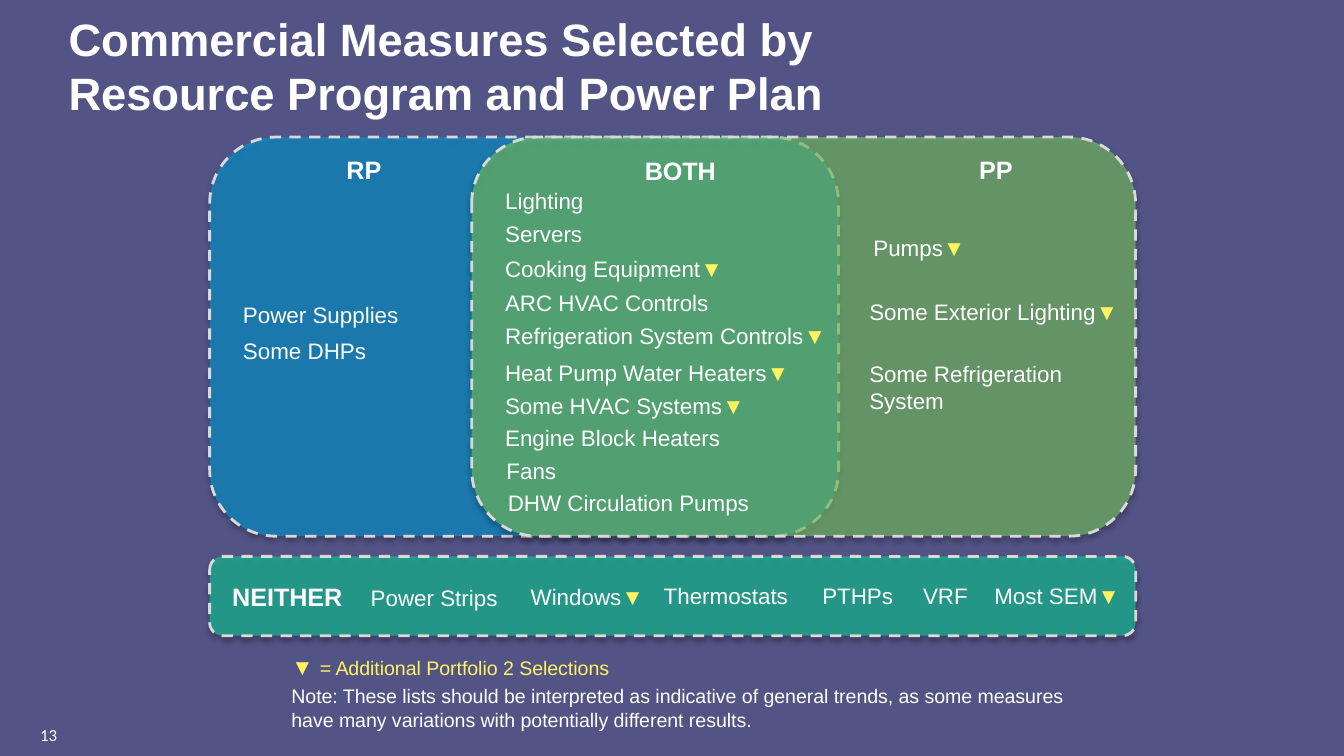
from lxml.etree import SubElement
from pptx import Presentation
from pptx.dml.color import RGBColor
from pptx.enum.dml import MSO_LINE
from pptx.enum.shapes import MSO_SHAPE
from pptx.enum.text import MSO_ANCHOR, MSO_AUTO_SIZE, PP_ALIGN
from pptx.oxml.ns import qn
from pptx.util import Inches, Pt

WHITE, YELLOW, BORDER, BACKGROUND = "FFFFFF", "FFF35F", "D9D9D9", "535486"
MARK = "▼"

TITLE = {"size": Pt(24.3), "bold": True}
HEADING = {"size": Pt(13.5), "bold": True}
ITEM = {"size": Pt(12)}
NOTE = {"size": Pt(10.5)}
MARKED = {"size": Pt(12), "italic": True, "color": YELLOW}
PAGE_NUMBER = {"size": Pt(9), "name": "Calibri"}


def rgb(hex_color):
    return RGBColor.from_string(hex_color)


class SlideBuilder:
    """Holds the current slide and the style shared by its elements."""

    defaults = {"name": "Arial", "color": WHITE, "bold": False, "italic": False}

    def __init__(self, slide):
        self.slide = slide
        slide.background.fill.solid()
        slide.background.fill.fore_color.rgb = rgb(BACKGROUND)

    def add_run(self, paragraph, text, style):
        run = paragraph.add_run()
        run.text = text
        values = {**self.defaults, **style}
        run.font.color.rgb = rgb(values.pop("color"))
        for attribute, value in values.items():
            setattr(run.font, attribute, value)

    def title(self, lines, left, top, width, height):
        shape = self.slide.shapes.title
        box = {"left": left, "top": top, "width": width, "height": height}
        for attribute, value in box.items():
            setattr(shape, attribute, Inches(value))
        frame = shape.text_frame
        frame.vertical_anchor = MSO_ANCHOR.MIDDLE
        paragraph = frame.paragraphs[0]
        paragraph.alignment = PP_ALIGN.LEFT
        for index, line in enumerate(lines):
            if index:
                paragraph.add_line_break()
            self.add_run(paragraph, line, TITLE)

    def text(self, runs, left, top, width, height=0.3, wrap=False,
             align=PP_ALIGN.LEFT):
        """Add a one-paragraph text box from (text, style) pairs."""
        box = self.slide.shapes.add_textbox(
            Inches(left), Inches(top), Inches(width), Inches(height))
        frame = box.text_frame
        frame.word_wrap = wrap
        frame.auto_size = MSO_AUTO_SIZE.SHAPE_TO_FIT_TEXT
        paragraph = frame.paragraphs[0]
        paragraph.alignment = align
        for text, style in runs:
            self.add_run(paragraph, text, style)

    def measure(self, name, left, top, width, height=0.3, wrap=False):
        """Add a measure; a trailing mark gets its own style."""
        runs = [(name.removesuffix(MARK), ITEM)]
        if name.endswith(MARK):
            runs.append((MARK, MARKED))
        self.text(runs, left, top, width, height, wrap)

    def region(self, color, left, top, width, height):
        """Add a translucent rounded box with a dashed border and a shadow."""
        shape = self.slide.shapes.add_shape(
            MSO_SHAPE.ROUNDED_RECTANGLE,
            Inches(left), Inches(top), Inches(width), Inches(height))
        shape.shadow.inherit = False
        shape.fill.solid()
        shape.fill.fore_color.rgb = rgb(color)
        shape.line.color.rgb = rgb(BORDER)
        shape.line.width = Pt(1.5)
        shape.line.dash_style = MSO_LINE.DASH
        properties = shape.fill._xPr
        fill_color = properties.find(qn("a:solidFill")).find(qn("a:srgbClr"))
        SubElement(fill_color, qn("a:alpha"), val="60000")
        shadow = SubElement(
            properties.find(qn("a:effectLst")), qn("a:outerShdw"),
            blurRad=str(Pt(3.1)), dist=str(Pt(1.8)), dir="5400000",
            rotWithShape="0")
        shadow_color = SubElement(shadow, qn("a:srgbClr"), val="000000")
        SubElement(shadow_color, qn("a:alpha"), val="35000")


def main():
    presentation = Presentation()
    presentation.slide_width = Inches(10)
    presentation.slide_height = Inches(10 * 9 / 16)
    title_only = presentation.slide_layouts[5]
    builder = SlideBuilder(presentation.slides.add_slide(title_only))

    builder.title(["Commercial Measures Selected by ",
                   "Resource Program and Power Plan"], 0.41, 0.05, 9.49, 0.87)

    builder.region("009DD9", 1.56, 1.02, 4.68, 2.97)
    builder.region("7CCA62", 3.51, 1.02, 4.94, 2.97)
    builder.region("10CF9B", 1.56, 4.14, 6.89, 0.59)

    for heading, left, top, width in [
        ("RP", 2.48, 1.1, 0.46), ("BOTH", 4.7, 1.11, 0.74),
        ("NEITHER", 1.63, 4.28, 1.03),
    ]:
        builder.text([(heading, HEADING)], left, top, width, 0.33)
    builder.text([("PP", HEADING)], 6.56, 1.1, 1.7, 0.33, wrap=True,
                 align=PP_ALIGN.CENTER)

    for name, left, top, width in [
        # Resource program only
        ("Power Supplies", 1.71, 2.19, 1.37),
        ("Some DHPs", 1.71, 2.46, 1.13),
        # Both
        ("Lighting", 3.66, 1.34, 0.79),
        ("Servers", 3.66, 1.59, 0.78),
        ("Cooking Equipment▼", 3.66, 1.85, 1.83),
        ("ARC HVAC Controls", 3.66, 2.1, 1.73),
        ("Refrigeration System Controls▼", 3.66, 2.35, 2.61),
        ("Heat Pump Water Heaters▼", 3.66, 2.62, 2.38),
        ("Some HVAC Systems▼", 3.66, 2.87, 2),
        ("Engine Block Heaters", 3.66, 3.11, 1.81),
        ("Fans", 3.67, 3.35, 0.58),
        ("DHW Circulation Pumps", 3.68, 3.59, 2.01),
        # Neither
        ("Power Strips", 2.66, 4.3, 1.15),
        ("Windows▼", 3.85, 4.29, 1.05),
        ("Thermostats", 4.84, 4.28, 1.14),
        ("PTHPs", 6.02, 4.28, 0.73),
        ("VRF", 6.77, 4.28, 0.54),
        ("Most SEM▼", 7.3, 4.28, 1.15),
    ]:
        builder.measure(name, left, top, width)

    # Power plan only
    for name, left, top, width, height in [
        ("Pumps▼", 6.4, 1.69, 1.59, 0.3),
        ("Some Exterior Lighting▼", 6.37, 2.17, 2.13, 0.3),
        ("Some Refrigeration System", 6.37, 2.63, 1.83, 0.5),
    ]:
        builder.measure(name, left, top, width, height, wrap=True)

    builder.text([(MARK + " ", MARKED),
                  ("= Additional Portfolio 2 Selections",
                   {**NOTE, "color": YELLOW})], 2.07, 4.81, 2.62)
    builder.text([("Note: These lists should be interpreted as indicative of "
                   "general trends, as some measures have many variations "
                   "with potentially different results.", NOTE)],
                 2.07, 5.04, 5.98, 0.45, wrap=True)
    builder.text([("13", PAGE_NUMBER)], 0.2, 5.34, 0.75, 0.25, wrap=True)

    presentation.save("out.pptx")


if __name__ == "__main__":
    main()
